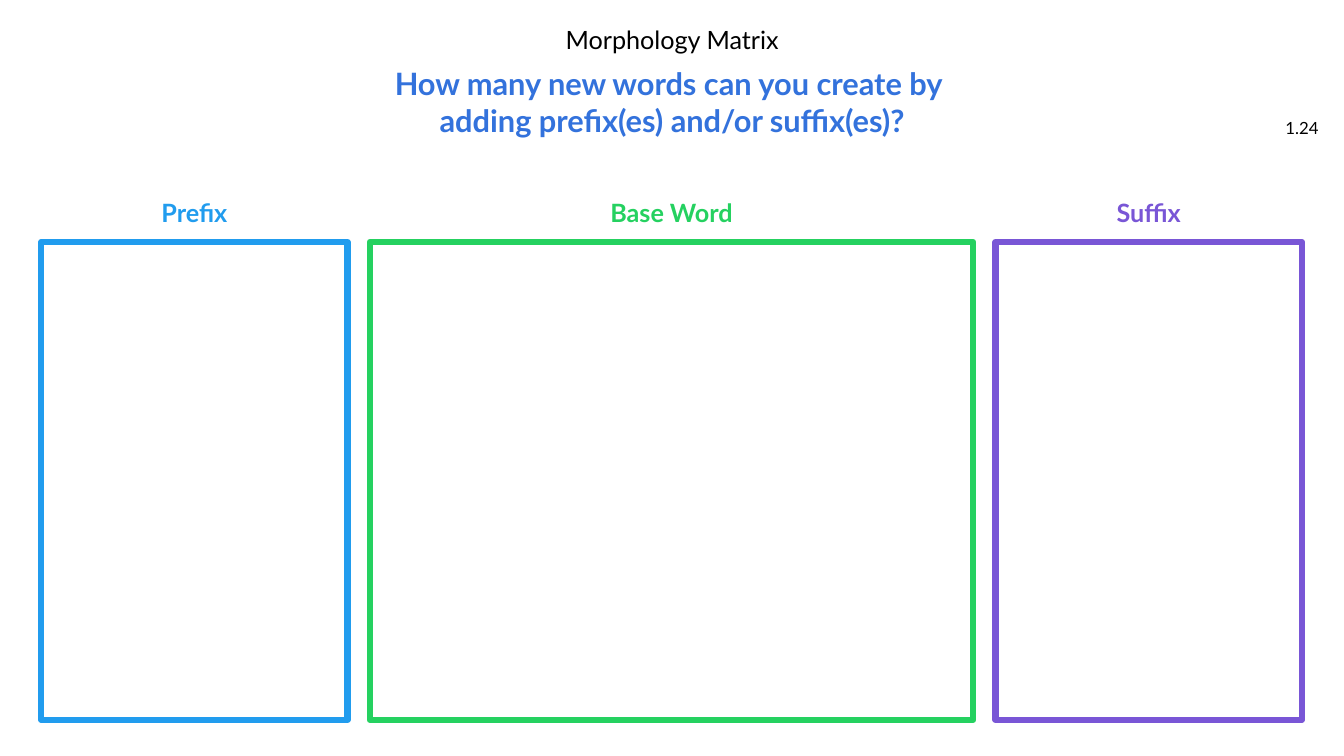
from pptx import Presentation
from pptx.dml.color import RGBColor
from pptx.enum import shapes, text
from pptx.util import Cm, Pt

FONT = "Lato"
BLACK = RGBColor(0x00, 0x00, 0x00)
HEADING_BLUE = RGBColor(0x33, 0x72, 0xDC)
PREFIX_BLUE = RGBColor(0x21, 0x9C, 0xEE)
BASE_GREEN = RGBColor(0x25, 0xD1, 0x60)
SUFFIX_PURPLE = RGBColor(0x79, 0x56, 0xD6)

# Label, label width, column width, colour (cm)
COLUMNS = [
    ("Prefix", 2.62, 7.72, PREFIX_BLUE),
    ("Base Word", 4.22, 15.21, BASE_GREEN),
    ("Suffix", 3.1, 7.72, SUFFIX_PURPLE),
]
COLUMN_GAP = 0.56
LABEL_HEIGHT = 1.02
LABEL_OFFSET = 1.25


def add_text(slide, box, lines, size, color, bold=False,
             align=text.PP_ALIGN.CENTER, anchor=text.MSO_ANCHOR.TOP):
    """Text box with one paragraph per line; box is (left, top, width, height) in cm."""
    tf = slide.shapes.add_textbox(*map(Cm, box)).text_frame
    tf.word_wrap = True
    tf.vertical_anchor = anchor
    for i, line in enumerate(lines):
        p = tf.add_paragraph() if i else tf.paragraphs[0]
        p.text = line
        p.alignment = align
        p.font.name = FONT
        p.font.size = Pt(size)
        p.font.bold = bold
        p.font.color.rgb = color
    return tf


def add_header(slide, left, top, width):
    # Question
    add_text(slide, (left, top + 0.94, width, 2.08),
             ["How many new words can you create by ",
              "adding prefix(es) and/or suffix(es)?"],
             22, HEADING_BLUE, bold=True, anchor=text.MSO_ANCHOR.MIDDLE)
    # Title
    title_width = 14.45
    tf = add_text(slide, (left + (width - title_width) / 2, top, title_width, 0.89),
                  ["Morphology Matrix"], 18, BLACK)
    tf.paragraphs[0].line_spacing = 0.9


def add_lesson_number(slide, left, top, width, height):
    add_text(slide, (left, top, width, height), ["1.24"], 12, BLACK,
             align=text.PP_ALIGN.RIGHT, anchor=text.MSO_ANCHOR.MIDDLE)


def add_matrix(slide, left, top, height):
    for label, label_width, width, color in COLUMNS:
        # Label centred above its frame
        add_text(slide, (left + (width - label_width) / 2, top - LABEL_OFFSET,
                         label_width, LABEL_HEIGHT), [label], 18, color, bold=True)
        # Empty frame
        sp = slide.shapes.add_shape(shapes.MSO_SHAPE.RECTANGLE,
                                    Cm(left), Cm(top), Cm(width), Cm(height))
        sp.shadow.inherit = False
        sp.fill.background()
        sp.line.color.rgb = color
        sp.line.width = Pt(4.5)
        left += width + COLUMN_GAP


def main():
    prs = Presentation()
    prs.slide_width, prs.slide_height = Cm(33.87), Cm(19.05)
    slide = prs.slides.add_slide(prs.slide_layouts[6])
    add_lesson_number(slide, 31.88, 2.72, 1.6, 1.02)
    add_header(slide, 5, 0.58, 23.88)
    add_matrix(slide, 1.04, 6.1, 12.04)
    prs.save("out.pptx")


if __name__ == "__main__":
    main()
